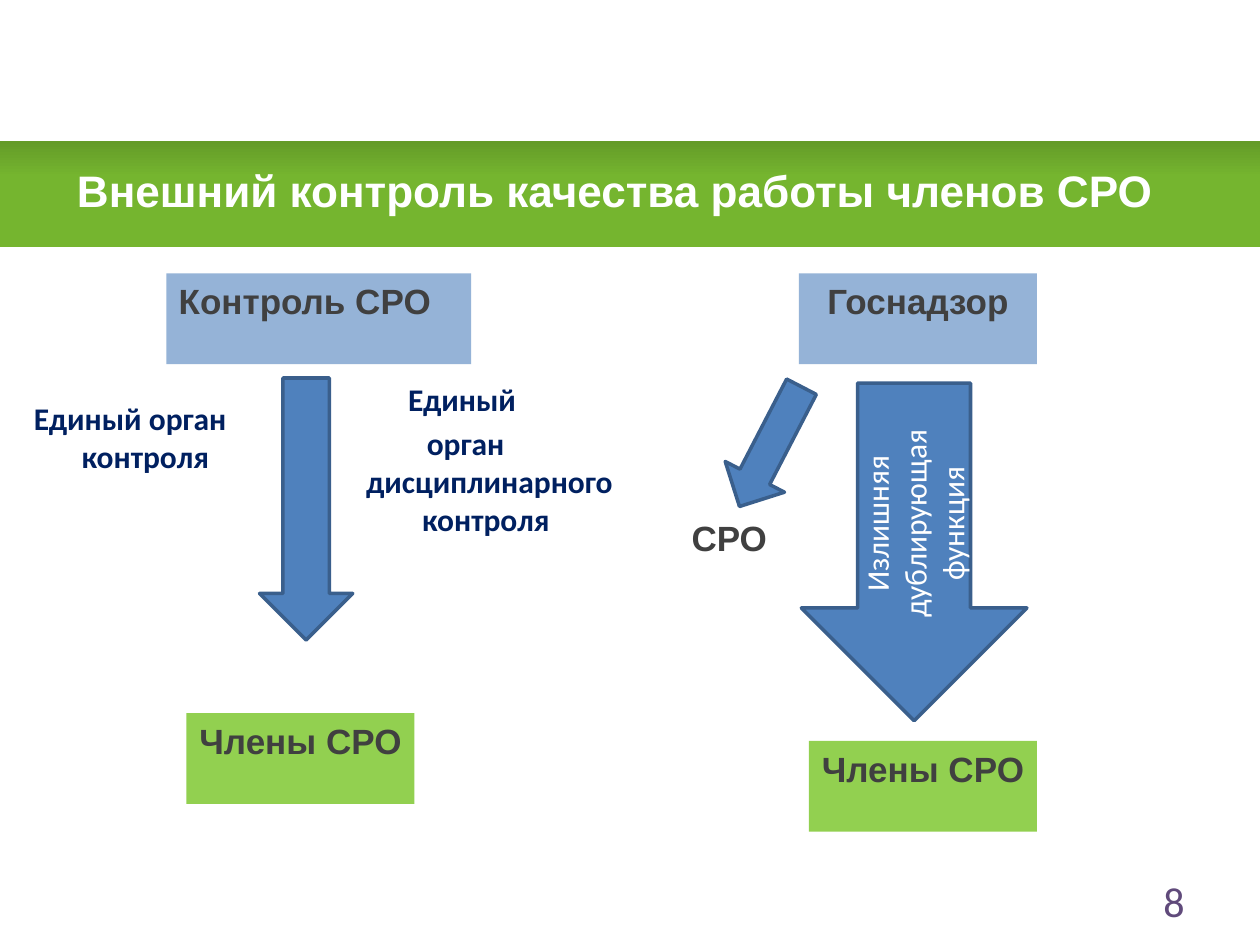
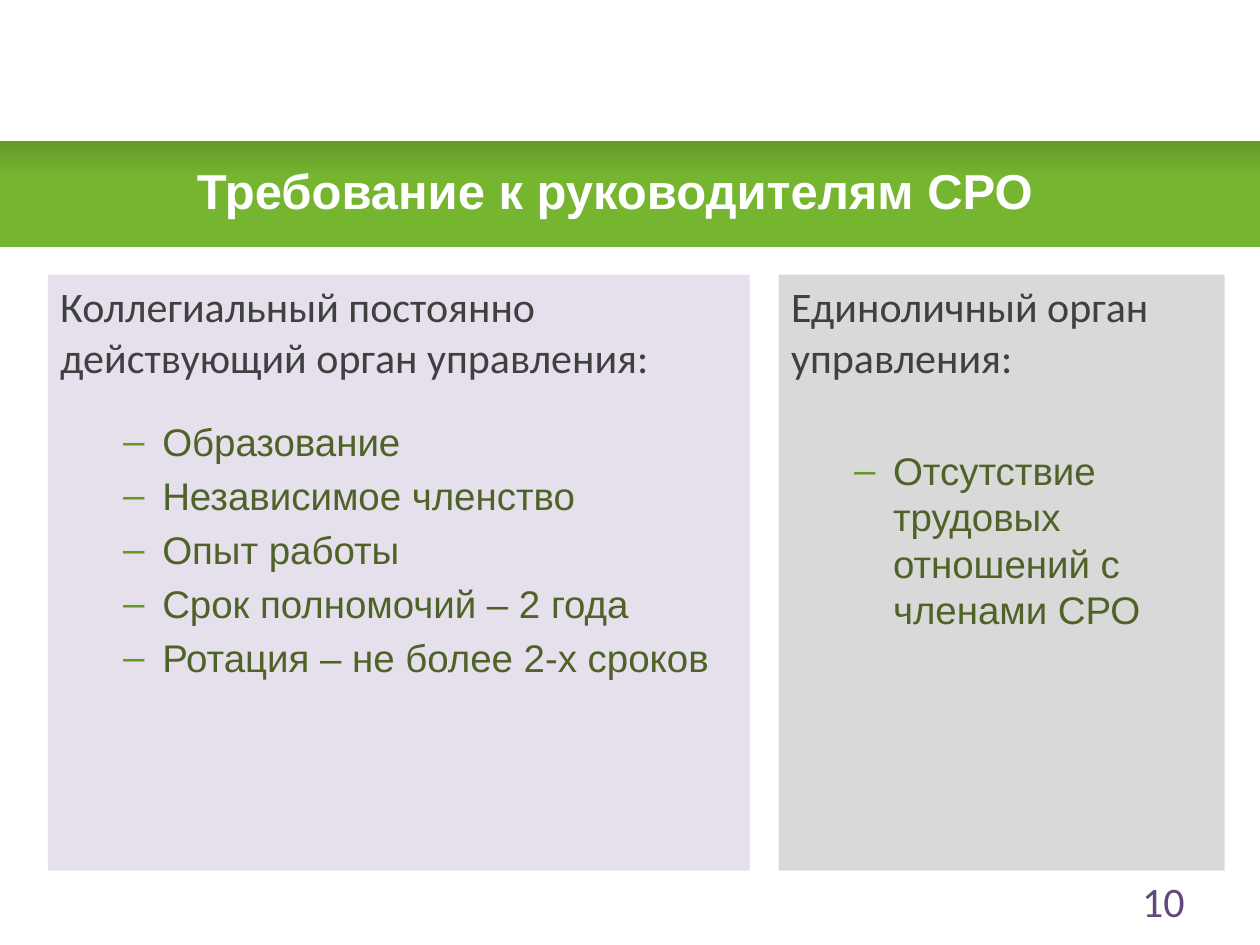
from lxml.etree import SubElement
from pptx import Presentation
from pptx.dml.color import RGBColor
from pptx.enum.shapes import MSO_SHAPE as Preset
from pptx.enum.text import MSO_ANCHOR as Anchor, PP_ALIGN as Align
from pptx.oxml.ns import qn
from pptx.util import Inches, Pt

COLORS = {
    "band_dark": "649B28", "band": "75B52F", "white": "FFFFFF",
    "ink": "404040", "navy": "002060", "olive": "4F6228", "purple": "604A7B",
    "control": "95B3D7", "members": "92D050",
    "arrow": "4F81BD", "arrow_edge": "3A5F8C",
    "lilac": "E6E0EC", "grey": "D9D9D9",
}

FORMATS = {
    "title": ({"name": "Arial", "size": Pt(28), "bold": True}, "white"),
    "long_title": ({"name": "Arial", "size": Pt(25.2), "bold": True}, "white"),
    "number": ({"name": "Calibri", "size": Pt(24)}, "purple"),
    "label": ({"name": "Arial", "size": Pt(20), "bold": True}, "ink"),
    "note": ({"name": "Calibri", "size": Pt(18), "bold": True}, "navy"),
    "arrow": ({"name": "Calibri", "size": Pt(18)}, "white"),
    "heading": ({"name": "Calibri", "size": Pt(24)}, "ink"),
    "item": ({"name": "Arial", "size": Pt(22)}, "olive"),
}

COLUMNS, ROWS = 100, 75
HANGING = (0.38, -0.38)
BULLETED = (0.81, -0.31)


def rgb(color):
    return RGBColor.from_string(COLORS[color])


class Deck:
    def __init__(self):
        self.presentation = Presentation()
        self.presentation.slide_width = Inches(10)
        self.presentation.slide_height = Inches(7.5)
        self.slide = None

    def place(self, column, row, columns, rows):
        across = self.presentation.slide_width / COLUMNS
        down = self.presentation.slide_height / ROWS
        return [round(n * unit) for n, unit in
                zip((column, row, columns, rows), (across, down) * 2)]

    def start(self, title, number, style="title"):
        layout = self.presentation.slide_layouts[6]
        self.slide = self.presentation.slides.add_slide(layout)
        self.band()
        self.text((3.8, 11.6, 90, 7), [title], style,
                  align=Align.CENTER, anchor=Anchor.MIDDLE)
        self.text((71.7, 69.5, 23.3, 4), [number], "number",
                  align=Align.RIGHT, anchor=Anchor.MIDDLE)

    def band(self):
        band = self.block((0, 11.2, COLUMNS, 8.4), "band")
        band.fill.gradient()
        band.fill.gradient_angle = 270
        stops = zip(band.fill.gradient_stops, (0, 0.34), ("band_dark", "band"))
        for stop, position, color in stops:
            stop.position = position
            stop.color.rgb = rgb(color)

    def block(self, area, fill, preset=Preset.RECTANGLE):
        block = self.slide.shapes.add_shape(preset, *self.place(*area))
        block.shadow.inherit = False
        block.fill.solid()
        block.fill.fore_color.rgb = rgb(fill)
        block.line.fill.background()
        return block

    def arrow(self, area, rotation=0):
        arrow = self.block(area, "arrow", Preset.DOWN_ARROW)
        arrow.line.color.rgb = rgb("arrow_edge")
        arrow.line.width = Pt(2)
        arrow.rotation = rotation
        return arrow

    def text(self, area, lines, style, **layout):
        box = self.slide.shapes.add_textbox(*self.place(*area))
        self.typeset(box.text_frame, lines, style, **layout)

    def label(self, area, caption, fill, align=Align.CENTER):
        self.typeset(self.block(area, fill).text_frame, [caption], "label",
                     align=align, indent=HANGING)

    def panel(self, area, fill, heading, items, gap):
        frame = self.block(area, fill).text_frame
        self.typeset(frame, [heading], "heading")
        for index, item in enumerate(items):
            paragraph = frame.add_paragraph()
            paragraph.level = 1
            paragraph.space_before = Pt(4.4 if index else gap)
            self.indent(paragraph, BULLETED)
            self.bullet(paragraph)
            self.add_words(paragraph, item, "item")

    def typeset(self, frame, lines, style, align=Align.LEFT,
                anchor=Anchor.TOP, indent=None):
        frame.word_wrap = True
        frame.vertical_anchor = anchor
        for index, line in enumerate(lines):
            paragraph = frame.add_paragraph() if index else frame.paragraphs[0]
            paragraph.alignment = align
            if index:
                paragraph.space_before = Pt(FORMATS[style][0]["size"].pt * 0.2)
            if indent:
                self.indent(paragraph, indent)
            self.add_words(paragraph, line, style)

    def add_words(self, paragraph, words, style):
        run = paragraph.add_run()
        run.text = words
        values, color = FORMATS[style]
        for name, value in values.items():
            setattr(run.font, name, value)
        run.font.color.rgb = rgb(color)

    def indent(self, paragraph, margins):
        properties = paragraph._p.get_or_add_pPr()
        for name, margin in zip(("marL", "indent"), margins):
            properties.set(name, str(Inches(margin)))

    def bullet(self, paragraph):
        properties = paragraph._p.get_or_add_pPr()
        tint = SubElement(properties, qn("a:buClr"))
        SubElement(tint, qn("a:srgbClr"), val=COLORS["band_dark"])
        SubElement(properties, qn("a:buFont"), typeface="Arial")
        SubElement(properties, qn("a:buChar"), char="–")


def quality_control(deck):
    deck.start("Внешний контроль качества работы членов СРО", "8", "long_title")
    deck.text((53.9, 40.5, 11, 7.2), ["СРО"], "label", indent=HANGING)
    deck.label((63.4, 21.7, 18.9, 7.2), "Госнадзор", "control")
    deck.label((13.2, 21.7, 24.2, 7.2), "Контроль СРО", "control", Align.LEFT)

    duplicate = deck.arrow((63.6, 30.4, 17.9, 26.8)).text_frame
    deck.typeset(duplicate, ["Излишняя дублирующая функция"], "arrow",
                 align=Align.CENTER, anchor=Anchor.MIDDLE)
    duplicate._txBody.bodyPr.set("vert", "vert270")

    deck.arrow((20.6, 30, 7.4, 20.8))
    deck.arrow((58.5, 30.1, 5.3, 10.7), 27.4)
    for column, row in ((64.2, 58.8), (14.8, 56.6)):
        deck.label((column, row, 18.1, 7.2), "Члены СРО", "members")

    deck.text((1.7, 31.2, 17.6, 11.8), ["Единый орган контроля"], "note",
              indent=HANGING)
    deck.text((23.9, 30.5, 26.1, 11.8),
              ["Единый ", "орган дисциплинарного контроля "], "note",
              align=Align.CENTER, anchor=Anchor.MIDDLE, indent=HANGING)


def leader_requirements(deck):
    deck.start("Требование к руководителям СРО", "10")
    deck.panel((3.8, 21.8, 55.7, 47.3), "lilac",
               "Коллегиальный постоянно действующий орган управления:",
               ["Образование", "Независимое членство", "Опыт работы",
                "Срок полномочий – 2 года", "Ротация – не более 2-х сроков"],
               gap=21)
    deck.panel((61.8, 21.8, 35.4, 47.3), "grey",
               "Единоличный орган управления:",
               ["Отсутствие трудовых отношений с членами СРО"],
               gap=37.5)


def main():
    deck = Deck()
    quality_control(deck)
    leader_requirements(deck)
    deck.presentation.save("out.pptx")


if __name__ == "__main__":
    main()
